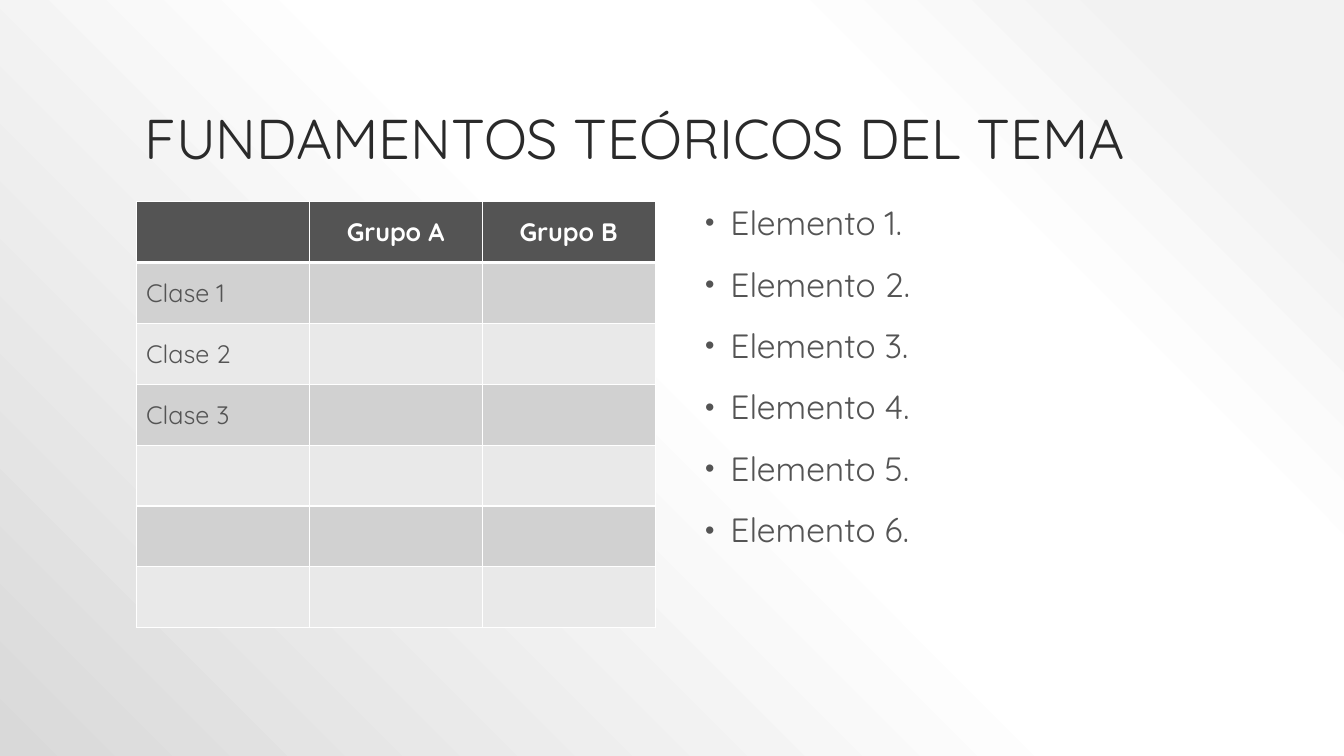
"""Build a slide with a class table beside a bulleted list."""
from dataclasses import dataclass

import lxml.etree
import pptx
import pptx.dml.color
import pptx.enum.text
import pptx.oxml
import pptx.oxml.ns
import pptx.util

Cm = pptx.util.Cm
Pt = pptx.util.Pt
ALIGN = pptx.enum.text.PP_ALIGN
ANCHOR = pptx.enum.text.MSO_ANCHOR

TITLE = "FUNDAMENTOS TEÓRICOS DEL TEMA"
ROWS = [
    ("", "Grupo A", "Grupo B"),
    ("Clase 1", "", ""),
    ("Clase 2", "", ""),
    ("Clase 3", "", ""),
    ("", "", ""),
    ("", "", ""),
    ("", "", ""),
]
ITEMS = [f"Elemento {n}." for n in range(1, 7)]

TITLE_BOX = (3.39, 0.76, 27.1, 3.68)
TABLE_BOX = (3.43, 5.08, 13.08, 10.74)
LIST_BOX = (17.4, 5.08, 13.92, 12.07)
BULLET_INDENT = (0.76, -0.64)


@dataclass(frozen=True)
class Theme:
    font: str = "Quicksand"
    title: str = "2A2A2A"
    text: str = "545454"
    light: str = "FFFFFF"
    bands: tuple = ("E9E9E9", "D1D1D1")
    backdrop: tuple = ((10, "F2F2F2"), (28, "FFFFFF"), (48, "FFFFFF"), (100, "D9D9D9"))
    title_size: int = 40
    list_size: int = 24
    table_size: int = 18
    border: int = 1
    header_border: int = 3


THEME = Theme()


def rgb(value):
    return pptx.dml.color.RGBColor.from_string(value)


def xml(markup):
    head, tail = markup.split(">", 1)
    close = "/" if head.endswith("/") else ""
    head = head.rstrip("/")
    return pptx.oxml.parse_xml(f"{head} {pptx.oxml.ns.nsdecls('a')}{close}>{tail}")


def write(p, text, size, color, bold=False, align=ALIGN.LEFT, spacing=None, before=None):
    p.alignment = align
    p.line_spacing = spacing
    p.space_before = before
    r = p.add_run()
    r.text = text
    r.font.name = THEME.font
    r.font.size = Pt(size)
    r.font.bold = bold
    r.font.color.rgb = rgb(color)


def add_bullet(p):
    pPr = p._p.get_or_add_pPr()
    left, first = BULLET_INDENT
    pPr.set("marL", str(Cm(left)))
    pPr.set("indent", str(Cm(first)))
    for markup in (
        f'<a:buClr><a:srgbClr val="{THEME.text}"/></a:buClr>',
        '<a:buSzPct val="80000"/>',
        '<a:buFont typeface="Arial"/>',
        '<a:buChar char="•"/>',
    ):
        pPr.append(xml(markup))


def add_box(slide, box, anchor):
    tf = slide.shapes.add_textbox(*map(Cm, box)).text_frame
    tf.word_wrap = True
    tf.vertical_anchor = anchor
    return tf


def set_background(slide):
    stops = "".join(
        f'<a:gs pos="{pos * 1000}"><a:srgbClr val="{color}"/></a:gs>'
        for pos, color in THEME.backdrop
    )
    fill = slide.background.fill
    fill.solid()
    bgPr = slide._element.cSld.bg.bgPr
    bgPr.replace(bgPr[0], xml(
        f'<a:gradFill rotWithShape="1"><a:gsLst>{stops}</a:gsLst><a:path path="circle">'
        '<a:fillToRect l="100000" b="100000"/></a:path></a:gradFill>'
    ))


def set_borders(cell, top, bottom):
    sides = {"lnL": THEME.border, "lnR": THEME.border, "lnT": top, "lnB": bottom}
    tcPr = cell._tc.get_or_add_tcPr()
    for i, (side, width) in enumerate(sides.items()):
        tcPr.insert(i, xml(
            f'<a:{side} w="{Pt(width)}"><a:solidFill><a:srgbClr val="{THEME.light}"/>'
            f"</a:solidFill></a:{side}>"
        ))


def add_class_table(slide):
    left, top, width, height = map(Cm, TABLE_BOX)
    table = slide.shapes.add_table(len(ROWS), len(ROWS[0]), left, top, width, height).table
    for i, row in enumerate(ROWS):
        header = i == 0
        for j, text in enumerate(row):
            cell = table.cell(i, j)
            cell.vertical_anchor = ANCHOR.MIDDLE
            cell.fill.solid()
            cell.fill.fore_color.rgb = rgb(THEME.text if header else THEME.bands[i % 2])
            set_borders(
                cell,
                THEME.header_border if i == 1 else THEME.border,
                THEME.header_border if header else THEME.border,
            )
            if text:
                write(cell.text_frame.paragraphs[0], text, THEME.table_size,
                      THEME.light if header else THEME.text, bold=header,
                      align=ALIGN.CENTER if header else ALIGN.LEFT)


def main():
    prs = pptx.Presentation()
    prs.slide_width, prs.slide_height = Cm(33.87), Cm(19.05)
    slide = prs.slides.add_slide(prs.slide_layouts[6])
    set_background(slide)

    tf = add_box(slide, TITLE_BOX, ANCHOR.BOTTOM)
    write(tf.paragraphs[0], TITLE, THEME.title_size, THEME.title, spacing=0.9)

    add_class_table(slide)

    tf = add_box(slide, LIST_BOX, ANCHOR.TOP)
    for i, item in enumerate(ITEMS):
        p = tf.add_paragraph() if i else tf.paragraphs[0]
        write(p, item, THEME.list_size, THEME.text, spacing=0.9, before=Pt(18))
        add_bullet(p)

    prs.save("out.pptx")


if __name__ == "__main__":
    main()
